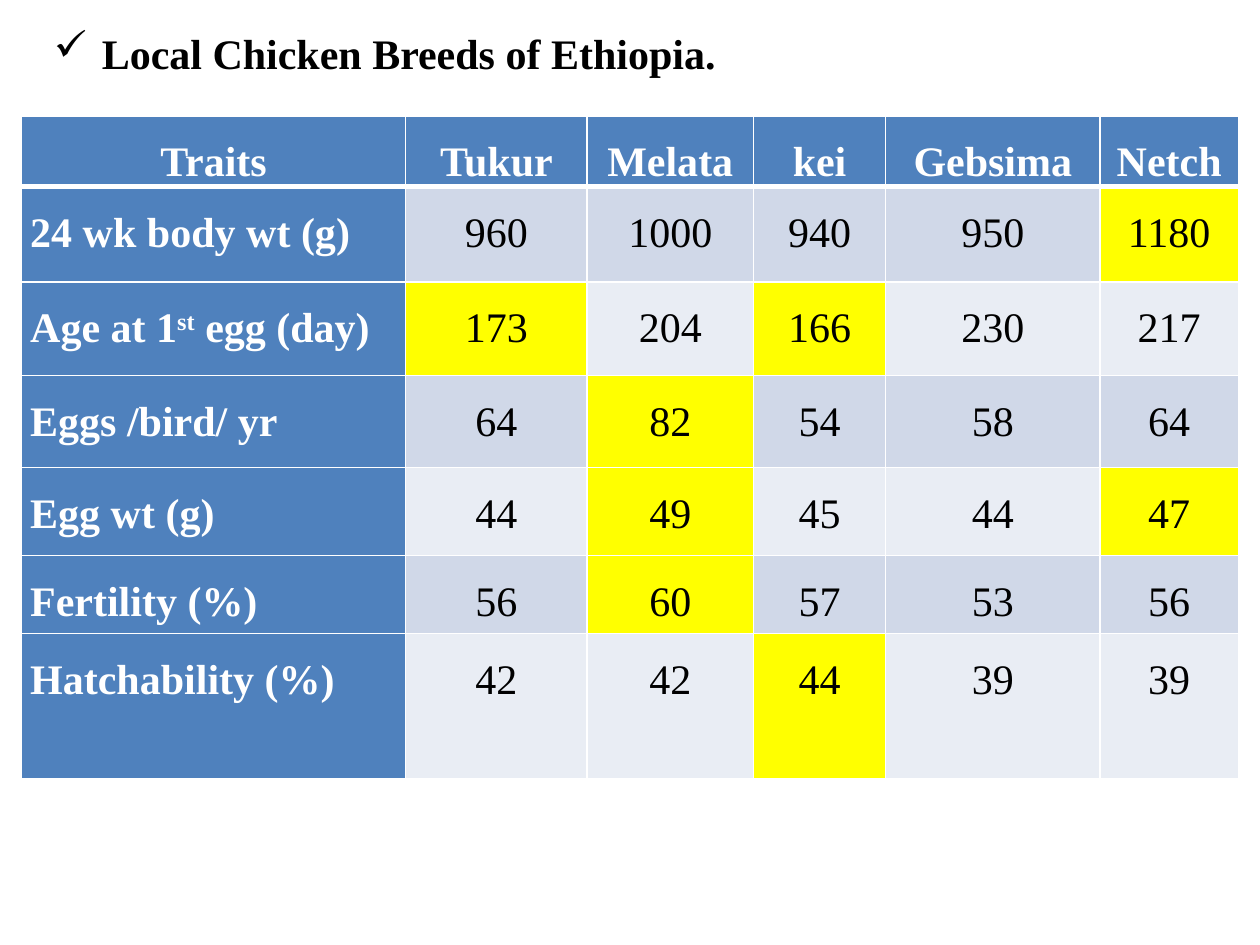
from dataclasses import dataclass

from pptx import Presentation
from pptx.dml.color import RGBColor
from pptx.enum.text import MSO_AUTO_SIZE as AutoSize, PP_ALIGN as Align
from pptx.oxml.ns import qn
from pptx.slide import Slide
from pptx.table import Table, _Cell as Cell
from pptx.text.text import _Paragraph as Paragraph
from pptx.util import Inches, Pt
from lxml.etree import SubElement

COLORS = {
    "header": "4F81BD",
    "odd": "D0D8E8",
    "even": "E9EDF4",
    "best": "FFFF00",
    "light": "FFFFFF",
    "dark": "000000",
}
BREEDS = ("Tukur", "Melata", "kei", "Gebsima", "Netch")
COLUMN_WIDTHS = (3.05, 1.44, 1.32, 1.05, 1.7, 1.1)
HEADER_HEIGHT = 0.56
FONT = {"name": "Times New Roman", "size": Pt(24)}
CELL_MARGINS = {
    "margin_left": Inches(0.07),
    "margin_right": Inches(0.07),
    "margin_top": 0,
    "margin_bottom": 0,
}


@dataclass(frozen=True)
class Trait:
    """One table row, with the breeds that do best in it."""

    label: tuple[str, ...]
    values: tuple[int, ...]
    best: tuple[str, ...]
    height: float


TRAITS = (
    Trait(("24 wk body wt (g)",), (960, 1000, 940, 950, 1180), ("Netch",), 0.76),
    Trait(("Age at 1", "st", " egg (day)"), (173, 204, 166, 230, 217), ("Tukur", "kei"), 0.74),
    Trait(("Eggs /bird/ yr",), (64, 82, 54, 58, 64), ("Melata",), 0.73),
    Trait(("Egg wt (g)",), (44, 49, 45, 44, 47), ("Melata", "Netch"), 0.7),
    Trait(("Fertility (%)",), (56, 60, 57, 53, 56), ("Melata",), 0.62),
    Trait(("Hatchability (%)",), (42, 42, 44, 39, 39), ("kei",), 1.15),
)


def apply_format(target: object, values: dict) -> None:
    """Set each named attribute on the target."""
    for name, value in values.items():
        setattr(target, name, value)


def add_spans(para: Paragraph, texts: tuple[str, ...], color: str, bold: bool) -> None:
    """Add text pieces, raising every second one as a superscript."""
    for index, text in enumerate(texts):
        span = para.add_run()
        span.text = text
        apply_format(span.font, {**FONT, "bold": bold})
        span.font.color.rgb = RGBColor.from_string(COLORS[color])
        if index % 2:
            span._r.get_or_add_rPr().set("baseline", "30000")


def add_borders(cell: Cell, top: float, bottom: float) -> None:
    """Draw white borders around a cell."""
    properties = cell._tc.get_or_add_tcPr()
    for side, width in {"lnL": 1, "lnR": 1, "lnT": top, "lnB": bottom}.items():
        line = SubElement(properties, qn(f"a:{side}"), w=str(Pt(width)))
        fill = SubElement(line, qn("a:solidFill"))
        SubElement(fill, qn("a:srgbClr"), val=COLORS["light"])


def fill_cell(table: Table, row: int, column: int, texts: tuple[str, ...], fill: str) -> None:
    """Write and format one table cell."""
    cell = table.cell(row, column)
    heading = fill == "header"
    apply_format(cell, CELL_MARGINS)
    add_borders(cell, top=3 if row == 1 else 1, bottom=3 if row == 0 else 1)
    cell.fill.solid()
    cell.fill.fore_color.rgb = RGBColor.from_string(COLORS[fill])
    para = cell.text_frame.paragraphs[0]
    align = Align.JUSTIFY if row and not column else Align.CENTER
    apply_format(para, {"alignment": align, "line_spacing": 1.5})
    add_spans(para, texts, "light" if heading else "dark", heading)


def add_title(page: Slide, text: str) -> None:
    """Add the bulleted slide title."""
    box = page.shapes.add_textbox(Inches(0.33), Inches(0.17), Inches(9.17), Inches(0.5))
    apply_format(box.text_frame, {"word_wrap": True, "auto_size": AutoSize.SHAPE_TO_FIT_TEXT})
    para = box.text_frame.paragraphs[0]
    para.alignment = Align.JUSTIFY
    properties = para._p.get_or_add_pPr()
    properties.set("marL", str(Inches(0.38)))
    properties.set("indent", str(-Inches(0.38)))
    SubElement(properties, qn("a:buChar"), char="✓")
    add_spans(para, (text,), "dark", True)


def add_trait_table(page: Slide) -> None:
    """Add the table of traits by breed."""
    heights = (HEADER_HEIGHT, *(trait.height for trait in TRAITS))
    table = page.shapes.add_table(
        len(heights), len(COLUMN_WIDTHS), Inches(0.17), Inches(0.92),
        Inches(sum(COLUMN_WIDTHS)), Inches(sum(heights)),
    ).table
    for column, width in zip(table.columns, COLUMN_WIDTHS):
        column.width = Inches(width)
    for row, height in zip(table.rows, heights):
        row.height = Inches(height)
    for column, name in enumerate(("Traits", *BREEDS)):
        fill_cell(table, 0, column, (name,), "header")
    for row, trait in enumerate(TRAITS, start=1):
        fill_cell(table, row, 0, trait.label, "header")
        band = "odd" if row % 2 else "even"
        for column, (breed, value) in enumerate(zip(BREEDS, trait.values), start=1):
            fill = "best" if breed in trait.best else band
            fill_cell(table, row, column, (str(value),), fill)


def main() -> None:
    """Build and save the deck."""
    deck = Presentation()
    apply_format(deck, {"slide_width": Inches(10), "slide_height": Inches(7.5)})
    page = deck.slides.add_slide(deck.slide_layouts[6])
    add_trait_table(page)
    add_title(page, "Local Chicken Breeds of Ethiopia.")
    deck.save("out.pptx")


if __name__ == "__main__":
    main()
